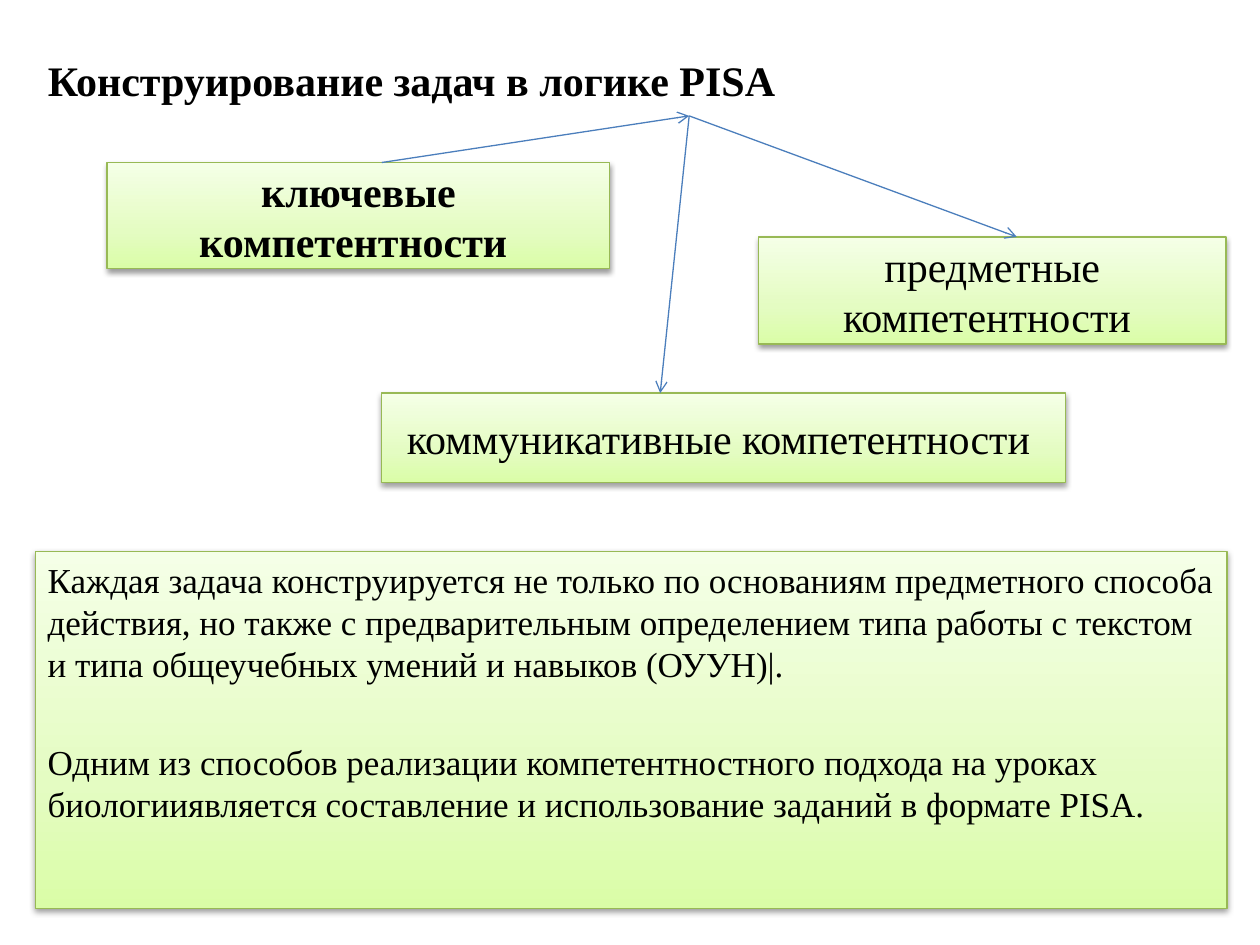
from lxml.etree import SubElement
from pptx import Presentation
from pptx.dml.color import RGBColor
from pptx.enum.shapes import MSO_CONNECTOR, MSO_SHAPE
from pptx.enum.text import MSO_ANCHOR, PP_ALIGN
from pptx.oxml import parse_xml
from pptx.oxml.ns import nsdecls, qn
from pptx.util import Inches, Pt

# Content
TITLE = "Конструирование задач в логике РISА"
TITLE_AT = (0.28, 0.3, 9.22, 0.61)
HUB = (5.47, 0.92)
# text, place, bold, x of the arrow on the top edge, arrow points to the hub
COMPETENCES = [
    ("ключевые компетентности ", (0.85, 1.29, 3.99, 0.84), True, 3.03, True),
    ("предметные компетентности ", (6.02, 1.88, 3.71, 0.85), False, 8.07, False),
    ("коммуникативные компетентности ", (3.03, 3.12, 5.43, 0.71), False, 5.24, False),
]
NOTE_AT = (0.28, 4.38, 9.46, 2.83)
# text, space before in points
NOTES = [
    ("Каждая задача конструируется не только по основаниям предметного способа "
     "действия, но также с предварительным определением типа работы с текстом "
     "и типа общеучебных умений и навыков (ОУУН)|.", 4),
    ("Одним из способов реализации компетентностного подхода на уроках "
     "биологииявляется составление и использование заданий в формате PISA.", 32),
]
FONT, INK, BORDER, ARROW = "Times New Roman", "000000", "98B955", "4B7EBC"
GRADIENT = [(0, "DAFDA7"), (35, "E4FCC2"), (100, "F5FFE7")]


def color(value):
    return RGBColor.from_string(value)


def write(para, text, size, bold=False, align=PP_ALIGN.LEFT):
    para.alignment = align
    span = para.add_run()
    span.text = text
    span.font.name, span.font.size, span.font.bold = FONT, Pt(size), bold
    span.font.color.rgb = color(INK)


def add_panel(page, place, anchor):
    """Green gradient rectangle with a soft shadow below it."""
    box = page.shapes.add_shape(MSO_SHAPE.RECTANGLE, *map(Inches, place))
    box.line.color.rgb = color(BORDER)
    box.line.width = Pt(0.75)
    stops = "".join(f'<a:gs pos="{pos * 1000}"><a:srgbClr val="{shade}"/></a:gs>'
                    for pos, shade in GRADIENT)
    outline = box.line._get_or_add_ln()
    outline.addprevious(parse_xml(
        f'<a:gradFill {nsdecls("a")} rotWithShape="1"><a:gsLst>{stops}</a:gsLst>'
        '<a:lin ang="16200000" scaled="0"/></a:gradFill>'))
    outline.addnext(parse_xml(
        f'<a:effectLst {nsdecls("a")}><a:outerShdw blurRad="{Pt(3.1)}" dist="{Pt(1.6)}" '
        'dir="5400000" rotWithShape="0"><a:srgbClr val="000000"><a:alpha val="38000"/>'
        '</a:srgbClr></a:outerShdw></a:effectLst>'))
    frame = box.text_frame
    frame.word_wrap = True
    frame.vertical_anchor = anchor
    return frame


def add_arrow(page, start, end):
    arrow = page.shapes.add_connector(MSO_CONNECTOR.STRAIGHT, *map(Inches, start + end))
    arrow.line.color.rgb = color(ARROW)
    arrow.line.width = Pt(0.75)
    SubElement(arrow.line._get_or_add_ln(), qn("a:tailEnd"), type="arrow")
    SubElement(arrow._element.spPr, qn("a:effectLst"))


def main():
    deck = Presentation()
    deck.slide_width, deck.slide_height = Inches(10), Inches(7.5)
    page = deck.slides.add_slide(deck.slide_layouts[5])

    # Title
    title = page.shapes.title
    title.left, title.top, title.width, title.height = map(Inches, TITLE_AT)
    title.text_frame.vertical_anchor = MSO_ANCHOR.MIDDLE
    para = title.text_frame.paragraphs[0]
    para.line_spacing = 1.15
    write(para, TITLE, 24, True, PP_ALIGN.JUSTIFY)

    # Explanation
    frame = add_panel(page, NOTE_AT, MSO_ANCHOR.TOP)
    for index, (text, gap) in enumerate(NOTES):
        para = frame.add_paragraph() if index else frame.paragraphs[0]
        para.space_before = Pt(gap)
        write(para, text, 20)

    # Competences and their arrows
    for text, place, bold, x, to_hub in COMPETENCES:
        frame = add_panel(page, place, MSO_ANCHOR.MIDDLE)
        write(frame.paragraphs[0], text, 24, bold, PP_ALIGN.CENTER)
        edge = (x, place[1])
        add_arrow(page, *((edge, HUB) if to_hub else (HUB, edge)))

    deck.save("out.pptx")


if __name__ == "__main__":
    main()
